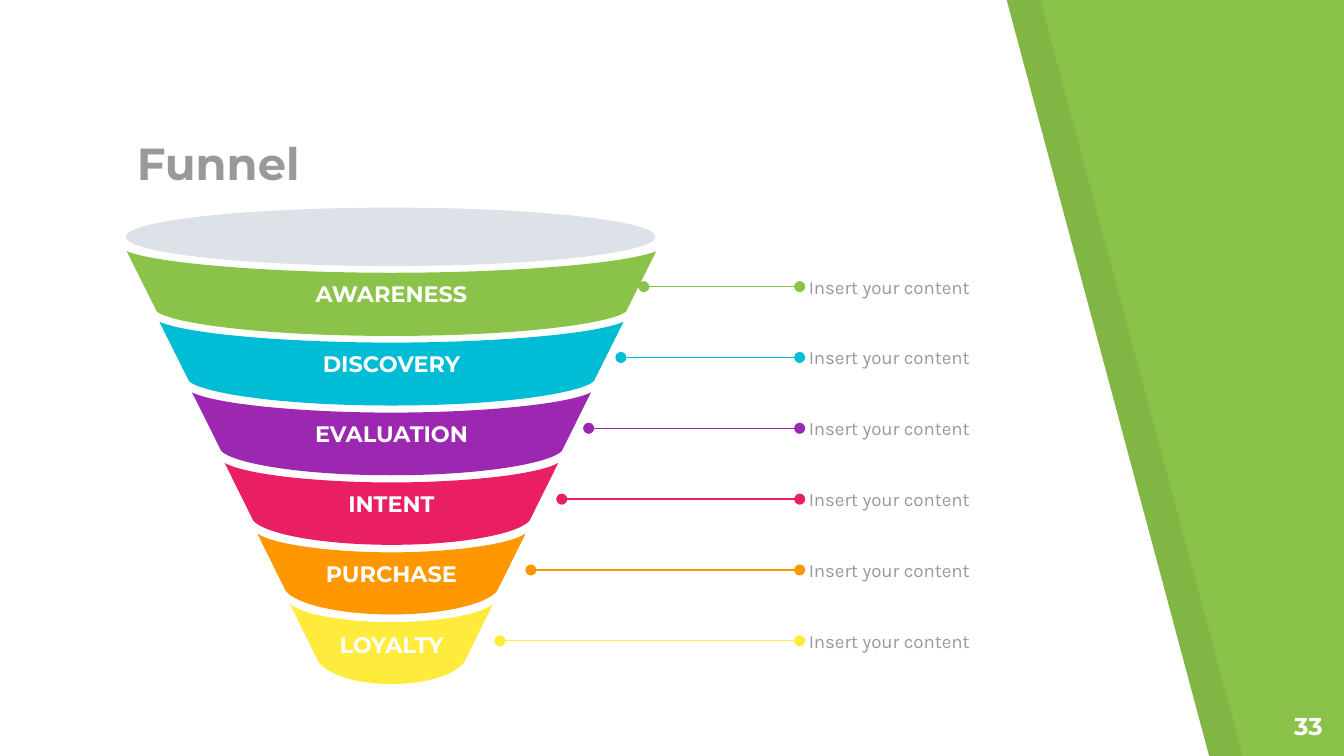
from dataclasses import dataclass

from lxml.etree import SubElement
from pptx import Presentation
from pptx.dml.color import RGBColor
from pptx.enum.shapes import MSO_CONNECTOR, MSO_SHAPE
from pptx.enum.text import MSO_ANCHOR, PP_ALIGN
from pptx.oxml.ns import qn
from pptx.util import Inches, Pt


@dataclass(frozen=True)
class Theme:
    green: str = "8BC34A"
    white: str = "FFFFFF"
    shade: str = "000000"
    grey: str = "999999"
    rim: str = "DCE2E7"
    head: str = "Montserrat"
    body: str = "Karla"
    title: float = 24
    page: float = 13
    label: float = 12
    note: float = 10
    rule: float = 0.75


THEME = Theme()
COLS, ROWS = 100, 56.25  # square grid, a tenth of an inch per cell
MID = 29.13  # axis of the funnel
PITCH = 5.27  # from one callout to the next
NOTE = "Insert your content"

# name, colour, column where the callout starts
STAGES = [
    ("AWARENESS", THEME.green, 47.9),
    ("DISCOVERY", "00BCD4", 46.2),
    ("EVALUATION", "9C27B0", 43.8),
    ("INTENT", "E91E63", 41.8),
    ("PURCHASE", "FF9800", 39.5),
    ("LOYALTY", "FFEB3B", 37.2),
]


def cell(num):
    return Inches(num / 10)


def paint(shape, color):
    shape.shadow.inherit = False
    shape.fill.solid()
    shape.fill.fore_color.rgb = RGBColor.from_string(color)
    shape.line.fill.background()


def write(shape, text, size, color, font, bold=True, align=PP_ALIGN.LEFT,
          anchor=MSO_ANCHOR.MIDDLE, inset=0):
    frame = shape.text_frame
    frame.word_wrap = True
    frame.vertical_anchor = anchor
    frame.margin_left = frame.margin_right = cell(inset)
    frame.margin_top = frame.margin_bottom = cell(inset)
    para = frame.paragraphs[0]
    para.alignment = align
    run = para.add_run()
    run.text = text
    run.font.name = font
    run.font.size = Pt(size)
    run.font.bold = bold
    run.font.color.rgb = RGBColor.from_string(color)


def add_text(slide, box, *args, **opts):
    shape = slide.shapes.add_textbox(*map(cell, box))
    write(shape, *args, **opts)


def add_path(slide, points, color):
    spots = [(cell(x), cell(y)) for x, y in points]
    pen = slide.shapes.build_freeform(*spots[0])
    pen.add_line_segments(spots[1:], close=True)
    shape = pen.convert_to_shape()
    paint(shape, color)
    return shape


def add_panel(slide, left, color):
    """Draw a page-high panel whose right edge slants outward."""
    points = [(left, -0.1), (left, 56.4), (left + 90, 56.4), (left + 74.9, 0)]
    return add_path(slide, points, color)


def bend(shape, pulls):
    """Turn straight sides into curves; pulls maps a side to two controls."""
    sides = list(shape._element.spPr.iter(qn("a:lnTo")))
    for idx, pair in pulls.items():
        side = sides[idx]
        side.tag = qn("a:cubicBezTo")
        for x, y in pair:
            SubElement(side, qn("a:pt"), x=str(cell(x) - shape.left),
                       y=str(cell(y) - shape.top))
        side.append(side[0])  # the end point follows its controls


def add_band(slide, idx, name, color):
    half, base = 19.7 - 2.43 * idx, 17.45 - 2.39 * idx
    top, dip = 18.7 + 5.25 * idx, 20.3 + 5.2 * idx
    foot, low = 23.2 + 5.18 * idx, 25 + 5.18 * idx
    band = add_path(slide, [
        (MID - half, top), (MID, dip), (MID + half, top),
        (MID + base, foot), (MID, low), (MID - base, foot)], color)

    rim = (0.87 * half, top + 0.62 * (dip - top)), (0.42 * half, dip)
    sole = (0.93 * base, foot + 0.5 * (low - foot)), (0.54 * base, low)
    left_rim, left_sole = ([(MID - x, y) for x, y in c] for c in (rim, sole))
    right_rim, right_sole = ([(MID + x, y) for x, y in c] for c in (rim, sole))
    bend(band, {0: left_rim, 1: right_rim[::-1],
                3: right_sole, 4: left_sole[::-1]})
    write(band, name, THEME.label, THEME.white, THEME.head,
          align=PP_ALIGN.CENTER, inset=0.4)


def add_rule(slide, start, end, row, color):
    rule = slide.shapes.add_connector(
        MSO_CONNECTOR.STRAIGHT, cell(start), cell(row), cell(end), cell(row))
    rule.line.width = Pt(THEME.rule)
    rule.line.color.rgb = RGBColor.from_string(color)
    props = rule._element.spPr
    edge = props.find(qn("a:ln"))
    for tag in ("a:headEnd", "a:tailEnd"):
        SubElement(edge, qn(tag), type="oval")
    SubElement(props, qn("a:effectLst"))


def add_back(slide):
    fill = slide.background.fill
    fill.solid()
    fill.fore_color.rgb = RGBColor.from_string(THEME.green)
    shade = add_panel(slide, 2.5, THEME.shade)
    tint = shade._element.spPr.find(qn("a:solidFill"))[0]
    SubElement(tint, qn("a:alpha"), val="7000")
    add_panel(slide, 0, THEME.white)


def main():
    deck = Presentation()
    deck.slide_width, deck.slide_height = cell(COLS), cell(ROWS)
    slide = deck.slides.add_slide(deck.slide_layouts[6])
    add_back(slide)
    add_text(slide, (9.2, 10.6, 52.5, 4.5), "Funnel", THEME.title, THEME.grey,
             THEME.head, anchor=MSO_ANCHOR.BOTTOM, inset=1)
    add_text(slide, (93.4, 51.9, 6, 4.3), "33", THEME.page, THEME.white,
             THEME.head, align=PP_ALIGN.RIGHT, anchor=MSO_ANCHOR.TOP, inset=1)

    for idx, (name, color, _) in enumerate(STAGES):
        add_band(slide, idx, name, color)
    rim = slide.shapes.add_shape(
        MSO_SHAPE.OVAL, *map(cell, (9.37, 15.45, 39.4, 4.35)))
    paint(rim, THEME.rim)
    for idx, (_, color, start) in enumerate(STAGES):
        row = 21.33 + PITCH * idx
        add_rule(slide, start, 59.5, row, color)
        add_text(slide, (60.18, row - 1.9, 21, 3.8), NOTE, THEME.note,
                 THEME.grey, THEME.body, bold=False)
    deck.save("out.pptx")


if __name__ == "__main__":
    main()
